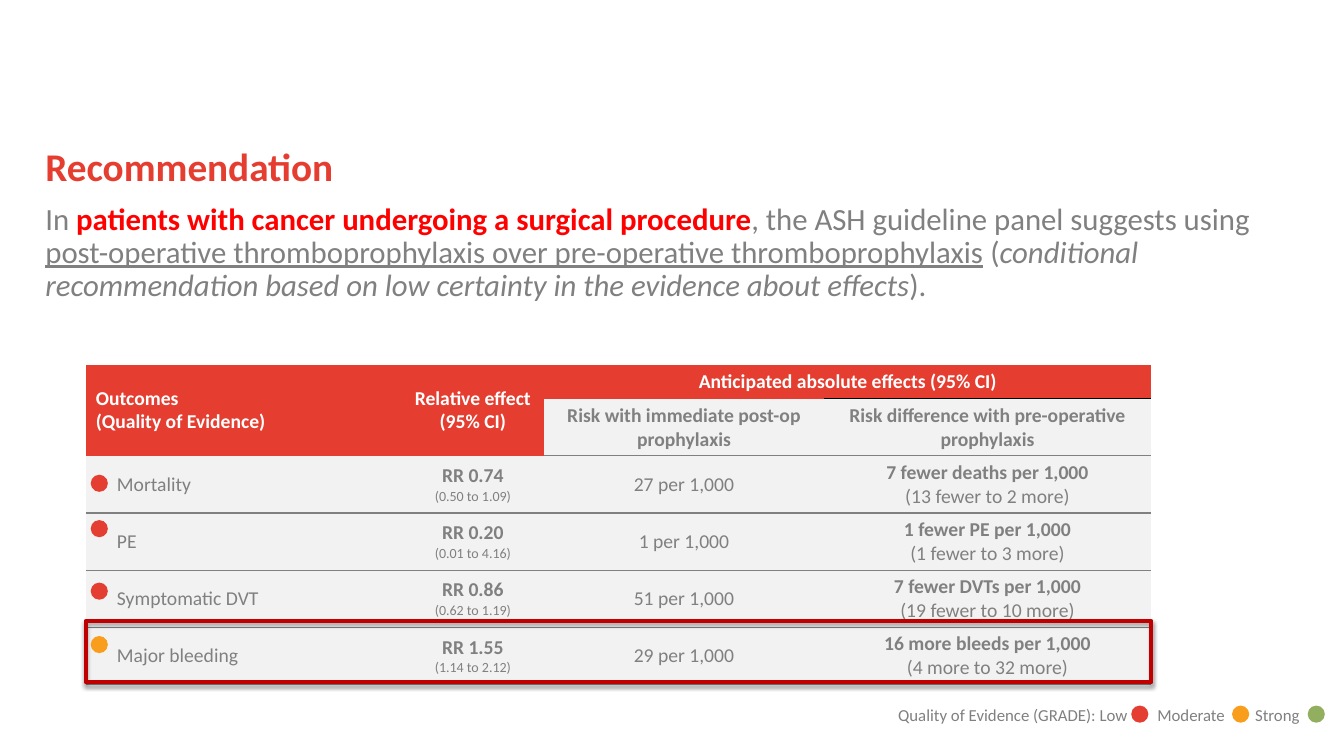
from lxml.etree import SubElement
from pptx import Presentation
from pptx.dml.color import RGBColor
from pptx.enum.shapes import MSO_SHAPE
from pptx.enum.text import MSO_ANCHOR, PP_ALIGN
from pptx.oxml import parse_xml
from pptx.oxml.ns import nsdecls, qn
from pptx.util import Inches, Pt

FONT = "Calibri"
COLORS = {
    "header": "E53E31", "low": "E43E32", "moderate": "F99D1C", "strong": "91AF5F",
    "text": "808080", "alert": "FF0000", "white": "FFFFFF", "cell": "F2F2F2",
    "black": "000000", "frame": "C00000",
}
SLIDE_W, SLIDE_H = 13.33, 7.5

TITLE = "Recommendation"
STATEMENT = [
    ("In ", {}),
    ("patients with cancer undergoing a surgical procedure", {"color": "alert", "bold": True}),
    (", the ASH guideline panel suggests using ", {}),
    ("post-operative thromboprophylaxis over pre-operative thromboprophylaxis", {"underline": True}),
    (" (", {}),
    ("conditional recommendation based on low certainty in the evidence about effects", {"italic": True}),
    (").", {}),
]
HEADERS = [
    (0, 0, ["Outcomes", "(Quality of Evidence)"]),
    (0, 1, ["Relative effect", "(95% CI)"]),
    (0, 2, ["Anticipated absolute effects (95% CI)"]),
    (1, 2, ["Risk with immediate post-op prophylaxis"]),
    (1, 3, ["Risk difference with pre-operative prophylaxis"]),
]
OUTCOMES = [
    ("Mortality", "RR 0.74", "(0.50 to 1.09)", "27 per 1,000", "7 fewer deaths per 1,000", "(13 fewer to 2 more)"),
    ("PE", "RR 0.20", "(0.01 to 4.16)", "1 per 1,000", "1 fewer PE per 1,000", "(1 fewer to 3 more)"),
    ("Symptomatic DVT", "RR 0.86", "(0.62 to 1.19)", "51 per 1,000", "7 fewer DVTs per 1,000", "(19 fewer to 10 more)"),
    ("Major bleeding", "RR 1.55", "(1.14 to 2.12)", "29 per 1,000", "16 more bleeds per 1,000", "(4 more to 32 more)"),
]
LEGEND = "Quality of Evidence (GRADE): Low\tModerate\tStrong"
LEGEND_TABS = [2.57, 3.54]
LEGEND_TOP = 7
DOT = 0.17
DOTS = [
    (11.22, LEGEND_TOP, "low"), (12.22, LEGEND_TOP, "moderate"), (12.97, LEGEND_TOP, "strong"),
    (0.9, 4.71, "low"), (0.9, 5.16, "low"), (0.9, 5.78, "low"), (0.9, 6.31, "moderate"),
]
TABLE_X, TABLE_Y = 0.85, 3.62
COLS = [3.13, 1.42, 2.77, 3.25]
ROWS = [0.33] + [0.56] * (1 + len(OUTCOMES))
INDENT = 0.31


def rgb(name):
    return RGBColor.from_string(COLORS[name])


def add_run(p, text, size, color="text", bold=False, italic=False, underline=False):
    r = p.add_run()
    r.text = text
    f = r.font
    f.name, f.size, f.bold, f.italic, f.underline = FONT, Pt(size), bold, italic, underline
    f.color.rgb = rgb(color)


def add_box(s, x, y, w, h):
    tf = s.shapes.add_textbox(Inches(x), Inches(y), Inches(w), Inches(h)).text_frame
    tf.word_wrap = True
    return tf


def set_borders(cell, **shown):
    tc_pr = cell._tc.get_or_add_tcPr()
    lines = []
    for side in "LRTB":
        ln = parse_xml(f'<a:ln{side} {nsdecls("a")} w="12700"/>')
        if side in shown:
            fill = SubElement(ln, qn("a:solidFill"))
            SubElement(fill, qn("a:srgbClr")).set("val", COLORS[shown[side]])
        else:
            SubElement(ln, qn("a:noFill"))
        lines.append(ln)
    for i, ln in enumerate(lines):
        tc_pr.insert(i, ln)


def fill_cell(cell, lines, fill="cell", centered=True):
    cell.fill.solid()
    cell.fill.fore_color.rgb = rgb(fill)
    cell.vertical_anchor = MSO_ANCHOR.MIDDLE
    tf = cell.text_frame
    for i, (text, style) in enumerate(lines):
        p = tf.add_paragraph() if i else tf.paragraphs[0]
        p.alignment = PP_ALIGN.CENTER if centered else PP_ALIGN.LEFT
        add_run(p, text, **{"size": 14, **style})


def add_statement(s):
    tf = add_box(s, 0.45, 1.46, 12.39, 1.71)
    tf.margin_left = tf.margin_right = tf.margin_top = tf.margin_bottom = 0
    p = tf.paragraphs[0]
    p.line_spacing = 0.9
    add_run(p, TITLE, 28, "header", True)
    p = tf.add_paragraph()
    p.line_spacing, p.space_before = 0.9, Pt(10)
    for text, style in STATEMENT:
        add_run(p, text, 22, **style)


def add_outcomes(s):
    table = s.shapes.add_table(len(ROWS), len(COLS), Inches(TABLE_X), Inches(TABLE_Y),
                               Inches(sum(COLS)), Inches(sum(ROWS))).table
    table.first_row = table.horz_banding = False
    for col, w in zip(table.columns, COLS):
        col.width = Inches(w)
    for row, h in zip(table.rows, ROWS):
        row.height = Inches(h)
    for start, end in [((0, 0), (1, 0)), ((0, 1), (1, 1)), ((0, 2), (0, 3))]:
        table.cell(*start).merge(table.cell(*end))
    for row, col, lines in HEADERS:
        fill, color = ("cell", "text") if row else ("header", "white")
        style = {"color": color, "bold": True}
        fill_cell(table.cell(row, col), [(t, style) for t in lines], fill, col > 0)
    for row, (outcome, ratio, ci, risk, change, span) in enumerate(OUTCOMES, 2):
        bold = {"bold": True}
        fill_cell(table.cell(row, 0), [(outcome, {})], centered=False)
        table.cell(row, 0).margin_left = Inches(INDENT)
        fill_cell(table.cell(row, 1), [(ratio, bold), (ci, {"size": 10})])
        fill_cell(table.cell(row, 2), [(risk, {})])
        fill_cell(table.cell(row, 3), [(change, bold), (span, {})])
    for row in range(len(ROWS)):
        for col in range(len(COLS)):
            shown = {}
            if row > 1 or (row == 1 and col > 1):
                shown["B"] = "text"
            if row > 2 or (row == 2 and col > 1):
                shown["T"] = "text"
            if (row, col) == (1, 3):
                shown["T"] = "black"
            if (row, col) == (0, 3):
                shown["B"] = "black"
            set_borders(table.cell(row, col), **shown)


def add_legend(s):
    tf = add_box(s, 8.81, 6.94, 4.53, 0.3)
    p = tf.paragraphs[0]
    tabs = SubElement(p._p.get_or_add_pPr(), qn("a:tabLst"))
    for pos in LEGEND_TABS:
        tab = SubElement(tabs, qn("a:tab"))
        tab.set("pos", str(Inches(pos)))
        tab.set("algn", "l")
    add_run(p, LEGEND, 12)


def add_dots(s):
    for x, y, color in DOTS:
        sp = s.shapes.add_shape(MSO_SHAPE.OVAL, Inches(x), Inches(y), Inches(DOT), Inches(DOT))
        sp.shadow.inherit = False
        sp.fill.solid()
        sp.fill.fore_color.rgb = rgb(color)
        sp.line.fill.background()


def add_highlight(s):
    sp = s.shapes.add_shape(MSO_SHAPE.RECTANGLE, Inches(TABLE_X), Inches(6.16),
                            Inches(sum(COLS)), Inches(0.61))
    sp.shadow.inherit = False
    sp.fill.background()
    sp.line.color.rgb = rgb("frame")
    sp.line.width = Pt(3)
    effects = sp._element.spPr.find(qn("a:effectLst"))
    effects.append(parse_xml(
        f'<a:outerShdw {nsdecls("a")} blurRad="{Pt(3.1)}" dist="{Pt(1.8)}" dir="5400000" rotWithShape="0">'
        f'<a:srgbClr val="{COLORS["black"]}"><a:alpha val="35000"/></a:srgbClr></a:outerShdw>'))


def main():
    prs = Presentation()
    prs.slide_width, prs.slide_height = Inches(SLIDE_W), Inches(SLIDE_H)
    s = prs.slides.add_slide(prs.slide_layouts[6])
    add_statement(s)
    add_legend(s)
    add_outcomes(s)
    add_dots(s)
    add_highlight(s)
    prs.save("out.pptx")


if __name__ == "__main__":
    main()
